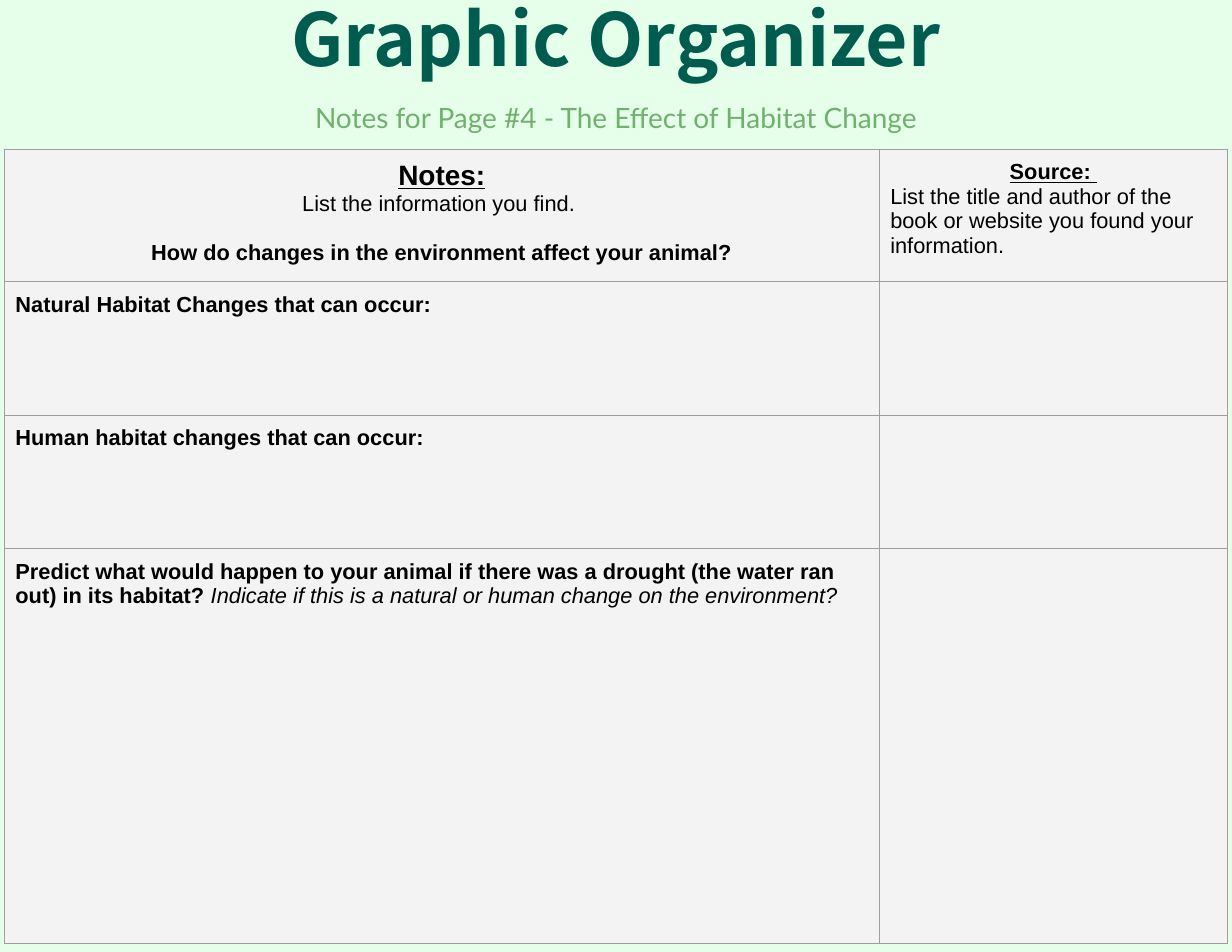
from lxml.etree import SubElement
from pptx import Presentation
from pptx.dml.color import RGBColor
from pptx.enum.text import MSO_ANCHOR, PP_ALIGN
from pptx.oxml.ns import qn
from pptx.util import Cm, Pt

BLACK = "000000"
COLUMN_WIDTHS = [19.84, 7.9]
ROW_HEIGHTS = [2.87, 3.02, 3.02, 8.97]


def color(value):
    return RGBColor.from_string(value)


def set_margins(target, margin):
    target.margin_left = target.margin_right = Cm(margin)
    target.margin_top = target.margin_bottom = Cm(margin)


def style_span(span, size, font="Arial", ink=BLACK, bold=False, italic=False, underline=False):
    span.font.size = Pt(size)
    span.font.name = font
    span.font.color.rgb = color(ink)
    span.font.bold = bold
    span.font.italic = italic
    span.font.underline = underline


def add_heading(page, text, left, top, width, height, anchor, **style):
    box = page.shapes.add_textbox(Cm(left), Cm(top), Cm(width), Cm(height))
    frame = box.text_frame
    frame.word_wrap = True
    frame.vertical_anchor = anchor
    set_margins(frame, 0.3)
    frame.text = text
    para = frame.paragraphs[0]
    para.alignment = PP_ALIGN.CENTER
    style_span(para.runs[0], **style)


def style_cell(cell):
    """Fill the cell and draw its four borders."""
    set_margins(cell, 0.25)
    properties = cell._tc.get_or_add_tcPr()
    for side in ("lnL", "lnR", "lnT", "lnB"):
        line = SubElement(properties, qn(f"a:{side}"), w=str(Pt(0.75)))
        fill = SubElement(line, qn("a:solidFill"))
        SubElement(fill, qn("a:srgbClr"), val="9E9E9E")
    cell.fill.solid()
    cell.fill.fore_color.rgb = color("F3F3F3")


def write_cell(cell, lines, centered=0):
    """Write one paragraph per (text, style) pair; the first ones are centred."""
    frame = cell.text_frame
    frame.text = "\n".join(text for text, style in lines)
    for index, (para, (text, style)) in enumerate(zip(frame.paragraphs, lines)):
        para.alignment = PP_ALIGN.CENTER if index < centered else PP_ALIGN.LEFT
        style_span(para.runs[0], **style)


def add_notes_table(page):
    shape = page.shapes.add_table(
        len(ROW_HEIGHTS), len(COLUMN_WIDTHS), Cm(0.1), Cm(3.38),
        Cm(sum(COLUMN_WIDTHS)), Cm(sum(ROW_HEIGHTS)))
    table = shape.table
    for column, width in zip(table.columns, COLUMN_WIDTHS):
        column.width = Cm(width)
    for row, height in zip(table.rows, ROW_HEIGHTS):
        row.height = Cm(height)
    for cell in table.iter_cells():
        style_cell(cell)

    plain = {"size": 14}
    bold = {"size": 14, "bold": True}

    # Header row
    notes = table.cell(0, 0)
    write_cell(notes, [
        ("Notes:", {"size": 18, "bold": True, "underline": True}),
        ("List the information you find. ", plain),
        ("How do changes in the environment affect your animal?", bold),
    ], centered=3)
    notes.text_frame.paragraphs[2].space_before = Pt(16)
    write_cell(table.cell(0, 1), [
        ("Source: ", {**bold, "underline": True}),
        ("List the title and author of the book or website you found your information.", plain),
    ], centered=1)

    # Prompts
    prompts = [
        "Natural Habitat Changes that can occur:",
        "Human habitat changes that can occur:",
        "Predict what would happen to your animal if there was a drought "
        "(the water ran out) in its habitat?",
    ]
    for row, prompt in enumerate(prompts, start=1):
        write_cell(table.cell(row, 0), [(prompt, bold)])
    span = table.cell(3, 0).text_frame.paragraphs[0].add_run()
    span.text = " Indicate if this is a natural or human change on the environment?"
    style_span(span, 14, italic=True)


def main():
    deck = Presentation()
    deck.slide_width, deck.slide_height = Cm(27.94), Cm(21.59)
    page = deck.slides.add_slide(deck.slide_layouts[6])
    page.background.fill.solid()
    page.background.fill.fore_color.rgb = color("E5FFEB")

    # Headings
    add_heading(page, "Graphic Organizer", 0.95, -0.69, 26.04, 2.84, MSO_ANCHOR.BOTTOM,
                size=47, font="Noto Sans CJK KR", ink="005C4F", bold=True)
    add_heading(page, "Notes for Page #4 - The Effect of Habitat Change",
                0.95, 1.98, 26.04, 1.75, MSO_ANCHOR.TOP,
                size=18, font="Lato", ink="70B16D")

    # Notes and sources
    add_notes_table(page)
    deck.save("out.pptx")


if __name__ == "__main__":
    main()
